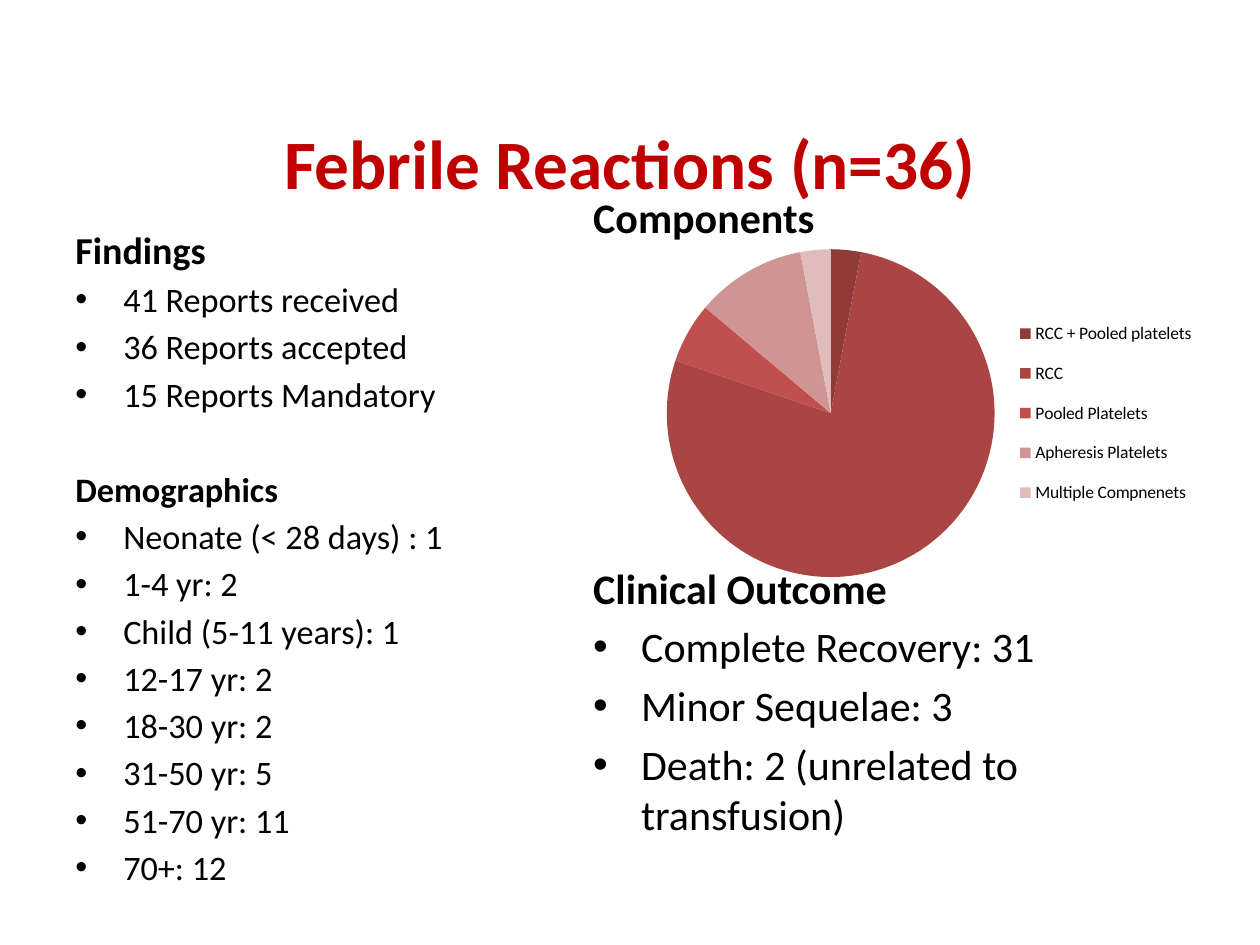
from lxml.etree import SubElement
from pptx import Presentation
from pptx.chart.data import CategoryChartData
from pptx.dml.color import RGBColor
from pptx.enum.chart import XL_CHART_TYPE, XL_LEGEND_POSITION
from pptx.enum.text import MSO_ANCHOR, PP_ALIGN
from pptx.oxml.ns import qn
from pptx.util import Inches, Pt


def colour(code):
    return RGBColor.from_string(code)


def write(para, text, size, font, code="000000", bold=False, before=0, bullet=False,
          align=PP_ALIGN.LEFT):
    para.alignment = align
    para.space_before = Pt(before)
    span = para.add_run()
    span.text = text
    span.font.name = font
    span.font.size = Pt(size)
    span.font.bold = bold
    span.font.color.rgb = colour(code)
    if bullet:
        properties = para._p.get_or_add_pPr()
        properties.set("marL", str(Inches(0.38)))
        properties.set("indent", str(-Inches(0.38)))
        SubElement(properties, qn("a:buFont"), typeface="Arial")
        SubElement(properties, qn("a:buChar"), char="•")


def place(parent, index, inner, **fractions):
    for old in parent.findall(qn("c:layout")):
        parent.remove(old)
    layout = SubElement(parent, qn("c:layout"))
    parent.insert(index, layout)
    manual = SubElement(layout, qn("c:manualLayout"))
    if inner:
        SubElement(manual, qn("c:layoutTarget"), val="inner")
    for side in ("x", "y"):
        SubElement(manual, qn(f"c:{side}Mode"), val="edge")
    for name, value in fractions.items():
        SubElement(manual, qn(f"c:{name}"), val=str(value))


class SlideBuilder:
    font = "Calibri"
    accent = "C00000"

    def __init__(self, page):
        self.page = page

    def text_frame(self, left, top, width, height):
        box = self.page.shapes.add_textbox(
            Inches(left), Inches(top), Inches(width), Inches(height))
        box.text_frame.word_wrap = True
        return box.text_frame

    def title(self, text, *place_in):
        frame = self.text_frame(*place_in)
        frame.vertical_anchor = MSO_ANCHOR.MIDDLE
        frame.margin_top = Inches(0.76)
        write(frame.paragraphs[0], text, 39.6, self.font, code=self.accent,
              bold=True, align=PP_ALIGN.CENTER)

    def outline(self, sections, size, before, *place_in):
        frame = self.text_frame(*place_in)
        para = frame.paragraphs[0]
        for heading, heading_size, gap, items in sections:
            if gap:
                para = frame.add_paragraph()
            write(para, heading, heading_size, self.font, bold=True, before=gap)
            for item in items:
                write(frame.add_paragraph(), item, size, self.font,
                      before=before, bullet=True)

    def pie(self, slices, left, top, width, height):
        data = CategoryChartData()
        data.categories = [name for name, value, code in slices]
        data.add_series("Series 1", [value for name, value, code in slices])
        chart = self.page.shapes.add_chart(
            XL_CHART_TYPE.PIE, Inches(left), Inches(top),
            Inches(width), Inches(height), data).chart
        chart.has_title = False
        chart.font.name = self.font
        chart.font.size = Pt(10)
        chart.font.color.rgb = colour("000000")
        chart.has_legend = True
        chart.legend.position = XL_LEGEND_POSITION.RIGHT
        chart.legend.include_in_layout = False
        plot = chart.plots[0]
        plot.vary_by_categories = True
        for index, (name, value, code) in enumerate(slices):
            fill = plot.series[0].points[index].format.fill
            fill.solid()
            fill.fore_color.rgb = colour(code)
        area = chart._chartSpace.chart.plotArea
        place(area, 0, True, x=0.03, y=0.155, w=0.59, h=0.69)
        place(chart.legend._element, 1, False, x=0.65, y=0.27, w=0.34, h=0.46)


def main():
    deck = Presentation()
    deck.slide_width = Inches(10)
    deck.slide_height = Inches(7.5)
    builder = SlideBuilder(deck.slides.add_slide(deck.slide_layouts[6]))
    builder.title("Febrile Reactions (n=36)", 0.5, 0.3, 9, 1.25)
    builder.outline([
        ("Findings", 21.7, 0,
         ["41 Reports received", "36 Reports accepted", "15 Reports Mandatory"]),
        ("Demographics", 19.6, 31,
         ["Neonate (< 28 days) : 1", "1-4 yr: 2", "Child (5-11 years): 1",
          "12-17 yr: 2", "18-30 yr: 2", "31-50 yr: 5", "51-70 yr: 11", "70+: 12"]),
    ], 19.6, 3.5, 0.5, 1.75, 4.42, 4.95)
    builder.outline([
        ("Components", 24, 0, []),
        ("Clinical Outcome", 24, 183,
         ["Complete Recovery: 31", "Minor Sequelae: 3",
          "Death: 2 (unrelated to transfusion)"]),
    ], 24, 4.8, 4.61, 1.47, 5.12, 5.23)
    builder.pie([
        ("RCC + Pooled platelets", 3, "903B39"),
        ("RCC", 78, "A94643"),
        ("Pooled Platelets", 6, "C0504D"),
        ("Apheresis Platelets", 11, "D09493"),
        ("Multiple Compnenets", 3, "E0BCBC"),
    ], 5.16, 1.39, 4.41, 3.78)
    deck.save("out.pptx")


if __name__ == "__main__":
    main()
